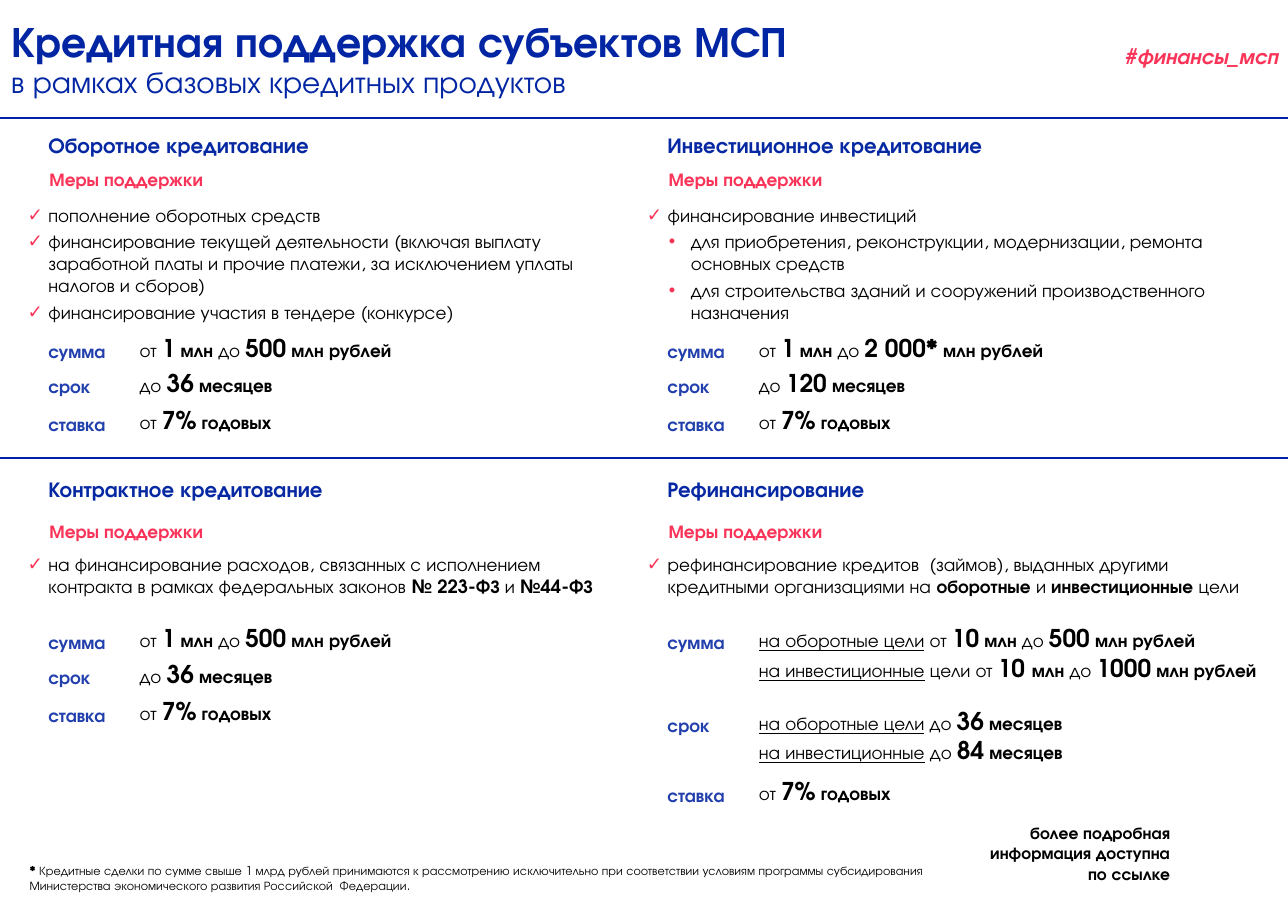
from lxml.etree import SubElement
from pptx import Presentation
from pptx.dml.color import RGBColor
from pptx.enum.shapes import MSO_CONNECTOR as LINE
from pptx.enum.text import MSO_ANCHOR as ANCHOR, MSO_AUTO_SIZE as FIT, PP_ALIGN as ALIGN
from pptx.oxml.ns import qn
from pptx.util import Inches, Pt

WIDE, HIGH = 11.69, 8.27
FONT = "TeX Gyre Adventor"
BLUE, NAVY, LABEL, RED, BLACK = "0225A3", "0628A2", "2240AD", "F93458", "000000"
RULE = "0022A9"
TOP, MID = 1.07, 4.16
LEFT, RIGHT = 0.34, 5.96
NAMES = ("сумма", "срок", "ставка")
CREDIT = "от |^1|~ млн |до |^500|~ млн рублей"
RATE = "от |^7%|~ годовых"


def rgb(code):
    return RGBColor.from_string(code)


def place(shape, x, y, w, h):
    shape.left, shape.top = Inches(x), Inches(y)
    shape.width, shape.height = Inches(w), Inches(h)


def style(run, size, color, bold=False):
    font = run.font
    font.name, font.size, font.bold = FONT, Pt(size), bold
    font.color.rgb = rgb(color)


def fill(para, text, size, color, bold):
    """Split text at bars; a part led by ^ is large, by ~ bold, by _ underlined."""
    for part in text.split("|"):
        mark = part[0] if part[0] in "^~_" else ""
        run = para.add_run()
        run.text = part[len(mark):]
        style(run, 16 if mark == "^" else size, color, bold or mark in ("^", "~"))
        if mark == "_":
            run.font.underline = True


def write(slide, box, lines, size=12, color=BLACK, bold=False, align=ALIGN.LEFT):
    shape = slide.shapes.add_textbox(0, 0, 0, 0)
    place(shape, *box)
    frame = shape.text_frame
    frame.word_wrap = True
    for i, line in enumerate(lines):
        para = frame.paragraphs[0] if i == 0 else frame.add_paragraph()
        para.alignment = align
        fill(para, line, size, color, bold)
    return frame


def bullet(para, sign, left, hang):
    props = para._p.get_or_add_pPr()
    props.set("marL", str(Inches(left)))
    props.set("indent", str(-Inches(hang)))
    tint = SubElement(props, qn("a:buClr"))
    SubElement(tint, qn("a:srgbClr")).set("val", RED)
    SubElement(props, qn("a:buFont")).set("typeface", "Arial")
    SubElement(props, qn("a:buChar")).set("char", sign)


def points(hold, box, items):
    """Fill a body placeholder with checks; items led by • go one step in."""
    place(hold, *box)
    frame = hold.text_frame
    frame.auto_size, frame.vertical_anchor = FIT.NONE, ANCHOR.TOP
    for i, item in enumerate(items):
        para = frame.paragraphs[0] if i == 0 else frame.add_paragraph()
        para.alignment = ALIGN.LEFT
        para.space_before, para.space_after = Pt(0), Pt(3)
        if item[0] == "•":
            bullet(para, "•", 0.4, 0.2)
        else:
            bullet(para, "✓", 0.19, 0.19)
        fill(para, item.lstrip("•"), 12, BLACK, False)


def panel(slide, hold, box, gaps, steps, name, items, terms):
    """Gaps set the tops of subhead, list and terms; steps those of each term."""
    x, y, w = box
    sub, body, base = gaps
    write(slide, (x, y, w - 0.5, 0.34), [name], 14, NAVY, True)
    write(slide, (x + 0.01, y + sub, 2.46, 0.3), ["Меры поддержки"], 12, RED, True)
    points(hold, (x - 0.19, y + body, w, 1.19), items)
    for label, lines, step in zip(NAMES, terms, steps):
        at = y + base + step
        write(slide, (x, at, 0.95, 0.3), [label], 12, LABEL, True)
        write(slide, (x + 0.83, at - 0.07, 4.9, 0.37 * len(lines)), lines)


def header(slide):
    title = slide.shapes.title
    place(title, 0, 0.26, 9.11, 0.57)
    frame = title.text_frame
    frame.text = "Кредитная поддержка субъектов МСП\nв рамках базовых кредитных продуктов"
    frame.auto_size, frame.vertical_anchor = FIT.NONE, ANCHOR.MIDDLE
    for para, size, bold in zip(frame.paragraphs, (28, 20), (True, False)):
        para.alignment, para.line_spacing = ALIGN.LEFT, 0.9
        style(para.runs[0], size, BLUE, bold)
    tag = write(slide, (9.58, 0.4, 2.12, 0.28), ["#финансы_мсп"],
                14, RED, True, ALIGN.RIGHT).paragraphs[0]
    tag.line_spacing = 0.75
    tag.runs[0].font.italic = True


def rules(slide):
    for y in (TOP, MID):
        line = slide.shapes.add_connector(
            LINE.STRAIGHT, 0, Inches(y), Inches(WIDE), Inches(y))
        line.line.color.rgb, line.line.width = rgb(RULE), Pt(1.5)
        SubElement(line._element.spPr, qn("a:effectLst"))


def footer(slide):
    write(slide, (0.17, 7.79, 8.35, 0.37), [
        "~* |Кредитные сделки по сумме свыше 1 млрд рублей принимаются к рассмотрению "
        "исключительно при соответствии условиям программы субсидирования "
        "Министерства экономического развития Российской  Федерации."], 8)
    more = write(slide, (8.81, 7.38, 1.91, 0.73),
                 ["более подробная информация доступна по ссылке"],
                 11, BLACK, True, ALIGN.RIGHT)
    more.vertical_anchor = ANCHOR.MIDDLE


def main():
    deck = Presentation()
    deck.slide_width, deck.slide_height = Inches(WIDE), Inches(HIGH)
    slide = deck.slides.add_slide(deck.slide_layouts.get_by_name("Comparison"))
    holds = [h for h in slide.placeholders if h.placeholder_format.idx > 0]
    header(slide)
    rules(slide)
    high, low = (0.33, 0.65, 1.89), (0.4, 0.7, 1.41)
    tight, loose = (0, 0.32, 0.66), (0, 0.75, 1.39)
    upper, lower = TOP + 0.08, MID + 0.11
    panels = [
        ((LEFT, upper, 5.4), high, tight, "Оборотное кредитование",
         ["пополнение оборотных средств",
          "финансирование текущей деятельности (включая выплату заработной платы "
          "и прочие платежи, за исключением уплаты налогов и сборов)",
          "финансирование участия в тендере (конкурсе)"],
         [[CREDIT], ["до |^36|~ месяцев"], [RATE]]),
        ((RIGHT, upper, 5.76), high, tight, "Инвестиционное кредитование",
         ["финансирование инвестиций",
          "•для приобретения, реконструкции, модернизации, ремонта основных средств",
          "•для строительства зданий и сооружений производственного назначения"],
         [["от |^1|~ млн |до |^2 000*|~ млн рублей"], ["до |^120|~ месяцев"], [RATE]]),
        ((LEFT, lower, 5.4), low, tight, "Контрактное кредитование",
         ["на финансирование расходов, связанных с исполнением контракта "
          "в рамках федеральных законов |~№ 223-ФЗ |и |~№44-ФЗ"],
         [[CREDIT], ["до |^36|~ месяцев"], [RATE]]),
        ((RIGHT, lower, 5.76), low, loose, "Рефинансирование",
         ["рефинансирование кредитов  (займов), выданных другими кредитными "
          "организациями на |~оборотные| и |~инвестиционные| цели"],
         [["_на оборотные цели| от |^10|~ млн| до |^500|~ млн рублей",
           "_на инвестиционные| цели от |^10 |~млн |до |^1000|~ млн рублей"],
          ["_на оборотные цели| до |^36|~ месяцев",
           "_на инвестиционные| до |^84|~ месяцев"], [RATE]]),
    ]
    for hold, parts in zip(holds, panels):
        panel(slide, hold, *parts)
    footer(slide)
    deck.save("out.pptx")


if __name__ == "__main__":
    main()
